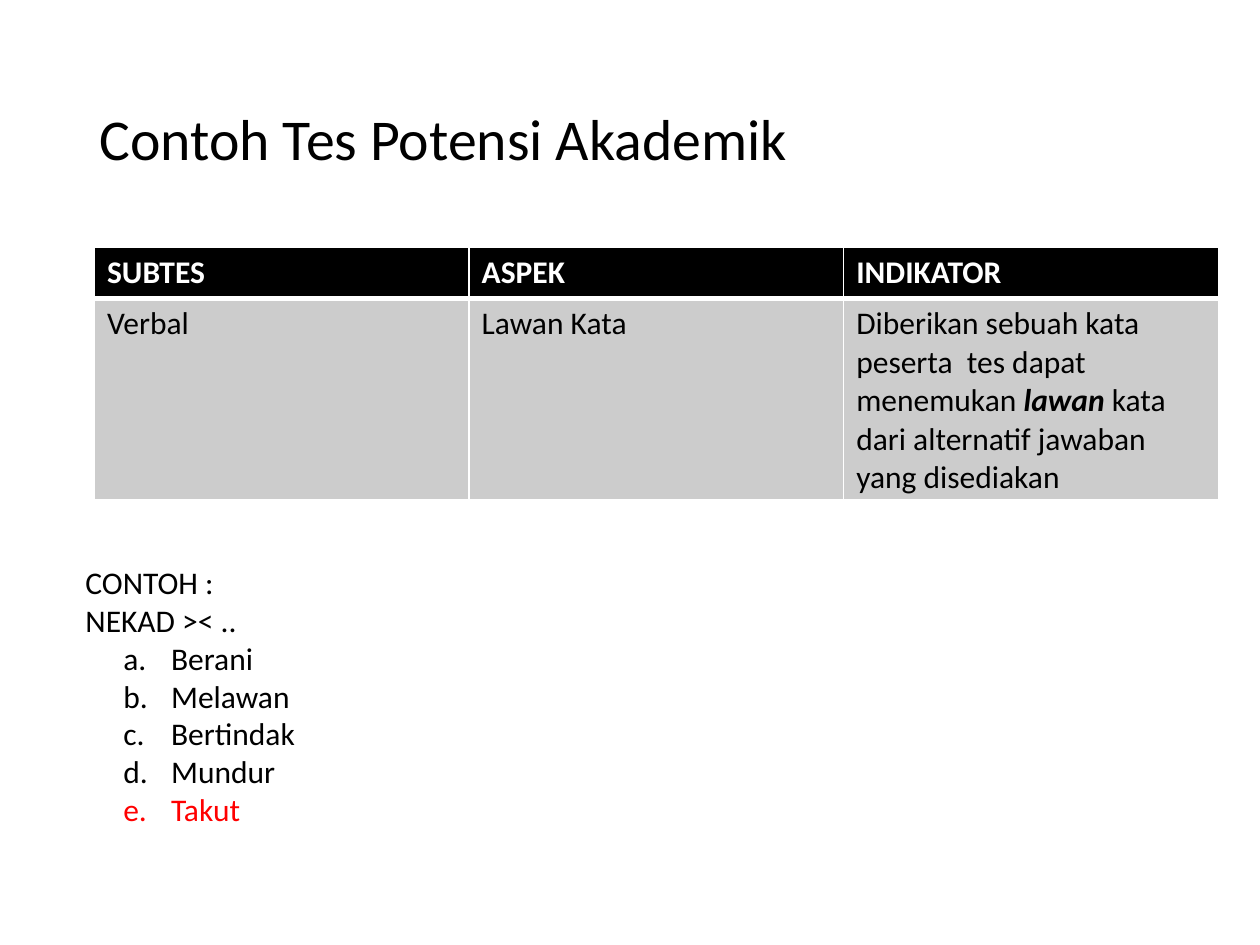
import pptx
import pptx.dml.color
import pptx.enum.text
import pptx.oxml
import pptx.oxml.ns
import pptx.util

COLORS = {"text": "000000", "paper": "FFFFFF", "header": "000000",
          "body": "CCCCCC", "answer": "FF0000"}
FONT = "Calibri"
BODY_SIZE = 18
# The slide is a grid of 100 columns and 75 rows of equal cells
COLUMNS, ROWS = 100, 75
CELL = pptx.util.Inches(10) // COLUMNS

HEADERS = ["SUBTES", "ASPEK", "INDIKATOR"]
# Each cell is a list of runs: text, emphasised
BODY_CELLS = [
    [("Verbal", False)],
    [("Lawan Kata", False)],
    [("Diberikan sebuah kata peserta  tes dapat menemukan ", False),
     ("lawan ", True),
     ("kata dari alternatif jawaban yang disediakan", False)],
]
QUESTION = ["CONTOH :", "NEKAD >< .."]
CHOICES = ["Berani", "Melawan", "Bertindak", "Mundur", "Takut"]
ANSWER = "Takut"


def grid(count):
    return pptx.util.Emu(round(count * CELL))


def add_run(paragraph, text, size=BODY_SIZE, color="text", bold=False, italic=False):
    run = paragraph.add_run()
    run.text = text
    run.font.name = FONT
    run.font.size = pptx.util.Pt(size)
    run.font.bold = bold
    run.font.italic = italic
    run.font.color.rgb = pptx.dml.color.RGBColor.from_string(COLORS[color])


def add_text_frame(slide, box):
    shape = slide.shapes.add_textbox(*map(grid, box))
    shape.text_frame.word_wrap = True
    return shape.text_frame


def add_title(slide, box):
    frame = add_text_frame(slide, box)
    frame.vertical_anchor = pptx.enum.text.MSO_ANCHOR.MIDDLE
    paragraph = frame.paragraphs[0]
    paragraph.line_spacing = 0.9
    add_run(paragraph, "Contoh Tes Potensi Akademik", size=33)


def style_cell(cell, fill, bottom_width):
    properties = cell._tc.get_or_add_tcPr()
    for side, width in {"L": 1, "R": 1, "T": 1, "B": bottom_width}.items():
        properties.append(pptx.oxml.parse_xml(
            f'<a:ln{side} {pptx.oxml.ns.nsdecls("a")} w="{pptx.util.Pt(width)}">'
            f'<a:solidFill><a:srgbClr val="{COLORS["paper"]}"/></a:solidFill>'
            f'</a:ln{side}>'))
    cell.fill.solid()
    cell.fill.fore_color.rgb = pptx.dml.color.RGBColor.from_string(COLORS[fill])


def add_subtest_table(slide, box):
    table = slide.shapes.add_table(2, len(HEADERS), *map(grid, box)).table
    for column in table.columns:
        column.width = grid(box[2] / len(HEADERS))
    for index, (header, runs) in enumerate(zip(HEADERS, BODY_CELLS)):
        # Header row, with a thicker rule below
        cell = table.cell(0, index)
        style_cell(cell, "header", bottom_width=3)
        add_run(cell.text_frame.paragraphs[0], header, color="paper", bold=True)
        # Body row
        cell = table.cell(1, index)
        style_cell(cell, "body", bottom_width=1)
        for text, emphasised in runs:
            add_run(cell.text_frame.paragraphs[0], text,
                    bold=emphasised, italic=emphasised)


def add_lettering(paragraph):
    properties = paragraph._p.get_or_add_pPr()
    properties.set("marL", str(grid(6.8)))
    properties.set("indent", str(-grid(3.8)))
    properties.append(pptx.oxml.parse_xml(
        f'<a:buFont {pptx.oxml.ns.nsdecls("a")} typeface="+mj-lt"/>'))
    properties.append(pptx.oxml.parse_xml(
        f'<a:buAutoNum {pptx.oxml.ns.nsdecls("a")} type="alphaLcPeriod"/>'))


def add_example(slide, box):
    frame = add_text_frame(slide, box)
    frame.auto_size = pptx.enum.text.MSO_AUTO_SIZE.SHAPE_TO_FIT_TEXT
    for index, text in enumerate(QUESTION + CHOICES):
        paragraph = frame.add_paragraph() if index else frame.paragraphs[0]
        if text in CHOICES:
            add_lettering(paragraph)
        add_run(paragraph, text, color="answer" if text == ANSWER else "text")


def main():
    presentation = pptx.Presentation()
    presentation.slide_width = grid(COLUMNS)
    presentation.slide_height = grid(ROWS)
    slide = presentation.slides.add_slide(presentation.slide_layouts[6])
    # Boxes are left, top, width, height in grid cells
    add_title(slide, (6.9, 4, 86.2, 14.5))
    add_subtest_table(slide, (7.5, 19.6, 89.2, 8.2))
    add_example(slide, (5.8, 44.2, 87.5, 22.2))
    presentation.save("out.pptx")


if __name__ == "__main__":
    main()
